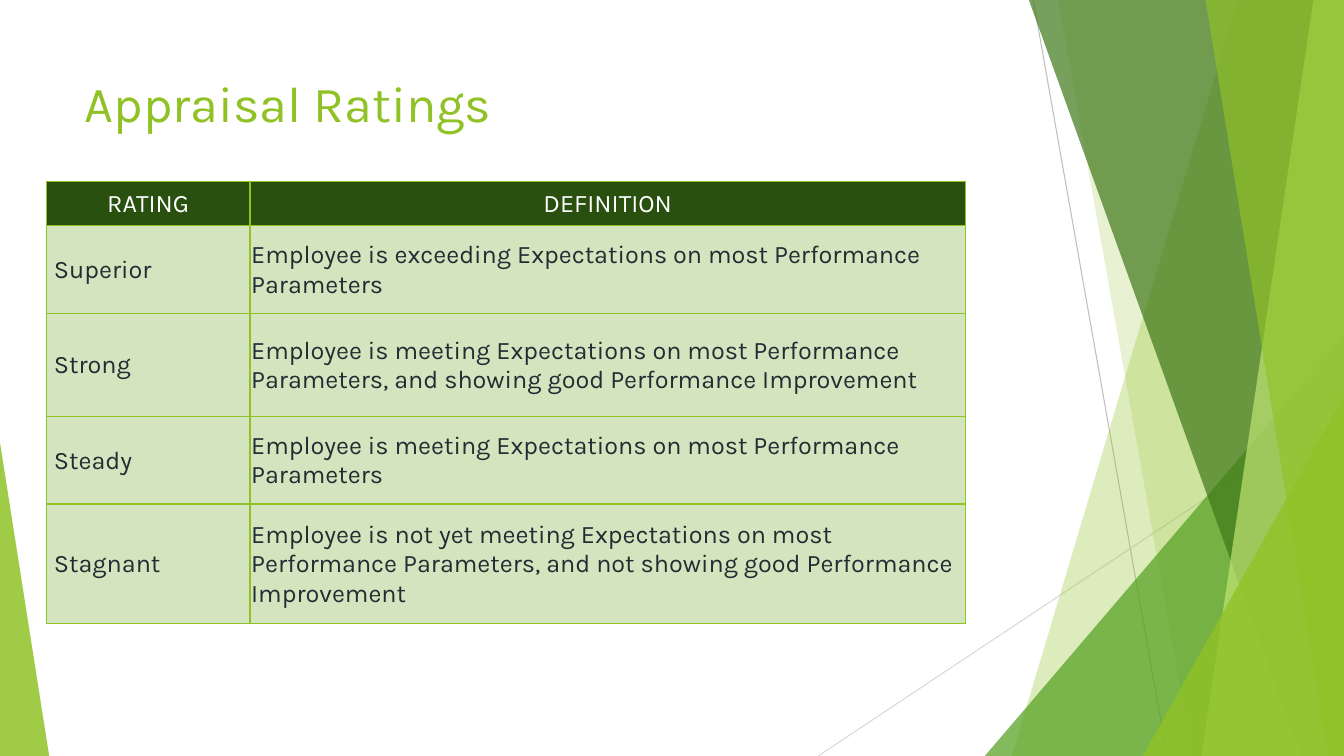
"""Build the appraisal ratings slide."""
import dataclasses
import typing

import lxml.etree
import pptx
import pptx.dml.color
import pptx.dml.fill
import pptx.enum.shapes
import pptx.enum.text
import pptx.oxml.ns
import pptx.shapes.autoshape
import pptx.slide
import pptx.table
import pptx.text.text
import pptx.util

Cm = pptx.util.Cm
Pt = pptx.util.Pt
qn = pptx.oxml.ns.qn
ALIGN = pptx.enum.text.PP_ALIGN
ANCHOR = pptx.enum.text.MSO_ANCHOR

WIDTH, HEIGHT = 33.87, 19.05
FONT = "Karla"
COLORS = {
    "lime": "90C226", "pale": "C0E474", "leaf": "54A021", "forest": "3F7819",
    "header": "2A5010", "body": "D3E4BE", "text": "212D32", "white": "FFFFFF",
    "gray": "BFBFBF", "silver": "D9D9D9",
}


@dataclasses.dataclass
class Line:
    start: tuple[float, float]
    end: tuple[float, float]
    color: str


@dataclasses.dataclass
class Band:
    top_x: float
    bottom_x: float
    color: str
    alpha: int


@dataclasses.dataclass
class Wedge:
    left: float
    top: float
    width: float
    apex: float
    color: str
    alpha: int


@dataclasses.dataclass
class Rating:
    name: str
    definition: str
    height: float


LINES = [
    Line((26.04, 0), (29.41, HEIGHT), "gray"),
    Line((WIDTH, 10.24), (20.62, HEIGHT), "silver"),
]
FACETS = [
    Band(31.19, 25.5, "lime", 30),
    Band(26.67, 30.05, "lime", 20),
    Wedge(24.82, 8.46, 9.05, 1, "leaf", 72),
    Band(25.93, 32.79, "forest", 70),
    Band(33.1, 30.28, "pale", 70),
    Band(30.38, 33.48, "lime", 65),
    Wedge(28.8, 9.98, 5.07, 1, "lime", 80),
    Wedge(0, 11.15, 1.24, 0, "lime", 85),
]
COLUMNS = [5.13, 18.03]
RATINGS = [
    Rating("RATING", "DEFINITION", 1.12),
    Rating("Superior", "Employee is exceeding Expectations on most Performance Parameters", 2.21),
    Rating("Strong", "Employee is meeting Expectations on most Performance Parameters, "
           "and showing good Performance Improvement", 2.59),
    Rating("Steady", "Employee is meeting Expectations on most Performance Parameters", 2.21),
    Rating("Stagnant", "Employee is not yet meeting Expectations on most Performance Parameters, "
           "and not showing good Performance Improvement", 3.02),
]


def rgb(name: str) -> pptx.dml.color.RGBColor:
    """Return the named colour."""
    return pptx.dml.color.RGBColor.from_string(COLORS[name])


def set_fill(fill: pptx.dml.fill.FillFormat, color: str) -> None:
    """Apply a solid fill."""
    fill.solid()
    fill.fore_color.rgb = rgb(color)


def set_text(tf: pptx.text.text.TextFrame, text: str, *, size: float, color: str,
             align: typing.Any = ALIGN.LEFT) -> None:
    """Write one formatted paragraph."""
    p = tf.paragraphs[0]
    p.alignment = align
    r = p.add_run()
    r.text = text
    r.font.name, r.font.size = FONT, Pt(size)
    r.font.color.rgb = rgb(color)


def draw_line(s: pptx.slide.Slide, line: Line) -> None:
    """Draw a thin line without a shadow."""
    ends = [Cm(v) for v in (*line.start, *line.end)]
    cx = s.shapes.add_connector(pptx.enum.shapes.MSO_CONNECTOR.STRAIGHT, *ends)
    cx.line.color.rgb = rgb(line.color)
    cx.line.width = Pt(0.75)
    lxml.etree.SubElement(cx._element.spPr, qn("a:effectLst"))


def add_band(s: pptx.slide.Slide, band: Band) -> pptx.shapes.autoshape.Shape:
    """Add a full-height band that reaches the right edge."""
    builder = s.shapes.build_freeform(Cm(band.top_x), 0)
    corners = [(WIDTH, 0), (WIDTH, HEIGHT), (band.bottom_x, HEIGHT)]
    builder.add_line_segments([(Cm(x), Cm(y)) for x, y in corners])
    return builder.convert_to_shape()


def add_wedge(s: pptx.slide.Slide, wedge: Wedge) -> pptx.shapes.autoshape.Shape:
    """Add a triangle that stands on the bottom edge."""
    sp = s.shapes.add_shape(
        pptx.enum.shapes.MSO_SHAPE.ISOSCELES_TRIANGLE,
        Cm(wedge.left), Cm(wedge.top), Cm(wedge.width), Cm(HEIGHT - wedge.top))
    sp.adjustments[0] = wedge.apex
    return sp


def draw_facet(s: pptx.slide.Slide, facet: Band | Wedge) -> None:
    """Draw a translucent facet."""
    sp = add_band(s, facet) if isinstance(facet, Band) else add_wedge(s, facet)
    sp.shadow.inherit = False
    sp.line.fill.background()
    set_fill(sp.fill, facet.color)
    clr = sp._element.spPr.find(qn("a:solidFill"))[0]
    lxml.etree.SubElement(clr, qn("a:alpha"), val=str(facet.alpha * 1000))


def set_borders(cell: pptx.table._Cell) -> None:
    """Outline a cell in lime."""
    tc_pr = cell._tc.get_or_add_tcPr()
    for i, side in enumerate(("lnL", "lnR", "lnT", "lnB")):
        ln = lxml.etree.Element(qn(f"a:{side}"), w=str(Pt(1)))
        fill = lxml.etree.SubElement(ln, qn("a:solidFill"))
        lxml.etree.SubElement(fill, qn("a:srgbClr"), val=COLORS["lime"])
        tc_pr.insert(i, ln)


def draw_table(s: pptx.slide.Slide, ratings: list[Rating]) -> None:
    """Draw the ratings with a dark header row."""
    total = sum(rating.height for rating in ratings)
    table = s.shapes.add_table(len(ratings), len(COLUMNS), Cm(1.17), Cm(4.57),
                               Cm(sum(COLUMNS)), Cm(total)).table
    for col, width in zip(table.columns, COLUMNS):
        col.width = Cm(width)
    for i, rating in enumerate(ratings):
        table.rows[i].height = Cm(rating.height)
        header = i == 0
        for j, text in enumerate((rating.name, rating.definition)):
            cell = table.cell(i, j)
            cell.vertical_anchor = ANCHOR.MIDDLE
            cell.margin_left = Cm(0.03 if header or j else 0.19)
            cell.margin_right = cell.margin_top = Cm(0.03)
            cell.margin_bottom = 0
            set_fill(cell.fill, "header" if header else "body")
            set_borders(cell)
            set_text(cell.text_frame, text, size=18, color="white" if header else "text",
                     align=ALIGN.CENTER if header else ALIGN.LEFT)


def draw_title(s: pptx.slide.Slide, text: str) -> None:
    """Place and format the title."""
    sp = s.shapes.title
    sp.left, sp.top, sp.width, sp.height = Cm(1.88), Cm(1.7), Cm(23.88), Cm(3.66)
    tf = sp.text_frame
    tf.auto_size = pptx.enum.text.MSO_AUTO_SIZE.NONE
    tf.vertical_anchor = ANCHOR.TOP
    set_text(tf, text, size=36, color="lime")


def main() -> None:
    """Build and save the presentation."""
    prs = pptx.Presentation()
    prs.slide_width, prs.slide_height = Cm(WIDTH), Cm(HEIGHT)
    s = prs.slides.add_slide(prs.slide_layouts[5])
    for line in LINES:
        draw_line(s, line)
    for facet in FACETS:
        draw_facet(s, facet)
    draw_title(s, "Appraisal Ratings")
    draw_table(s, RATINGS)
    prs.save("out.pptx")


if __name__ == "__main__":
    main()
